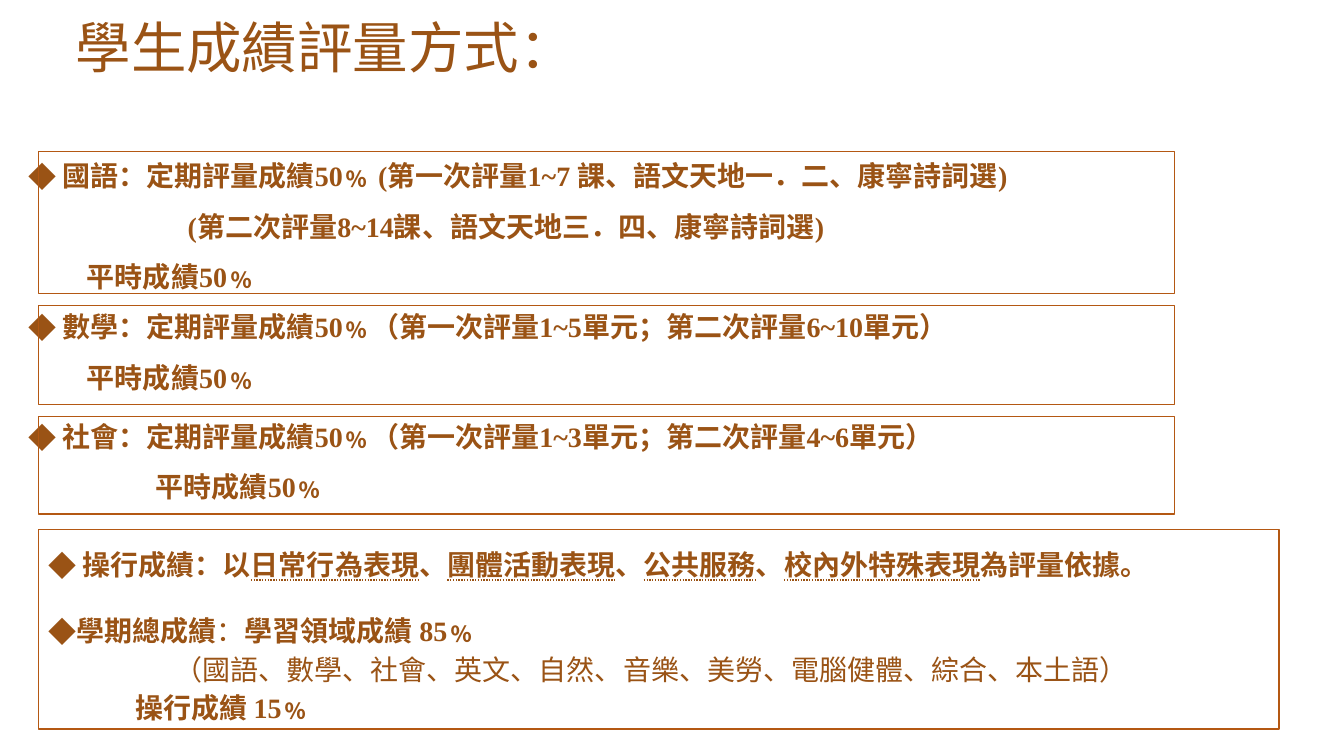
from dataclasses import dataclass

from lxml import etree
from pptx import Presentation
from pptx.dml.color import RGBColor
from pptx.enum import shapes, text
from pptx.oxml.ns import qn
from pptx.util import Pt


@dataclass(frozen=True)
class Theme:
    ink: RGBColor = RGBColor(0x9A, 0x53, 0x15)
    border: RGBColor = RGBColor(0xB4, 0x58, 0x13)
    latin: str = "Times New Roman"
    chinese: str = "Noto Sans CJK SC"
    title_size: float = 39.6
    body_size: float = 20
    border_width: float = 1


@dataclass(frozen=True)
class Line:
    """One paragraph: a list of (words, style) runs and its layout in points."""
    runs: list
    indent: float
    spacing: float
    hanging: float = 0
    before: float = 0
    after: float = 0
    bold: bool = True


THEME = Theme()
PLAIN, LIGHT, DOTTED = "plain", "light", "dotted"
SUBJECT_PITCH = 36
SUMMARY_PITCH = 27.6


def subject_line(words, indent, hanging=0, after=0):
    return Line([(words, PLAIN)], indent, SUBJECT_PITCH, hanging, after=after)


SUBJECTS = [
    subject_line("國語：定期評量成績50﹪ (第一次評量1~7 課、語文天地一．二、康寧詩詞選)", 37.5, 24.5),
    subject_line("(第二次評量8~14課、語文天地三．四、康寧詩詞選)", 127),
    subject_line("平時成績50﹪", 55),
    subject_line("數學：定期評量成績50﹪（第一次評量1~5單元；第二次評量6~10單元）", 37.5, 24.5),
    subject_line("平時成績50﹪", 55, after=6),
    subject_line("社會：定期評量成績50﹪（第一次評量1~3單元；第二次評量4~6單元）", 37.5, 24.5),
    subject_line("平時成績50﹪", 104),
]

SUMMARY = [
    Line([("操行成績：以", PLAIN), ("日常行為表現", DOTTED), ("、", PLAIN),
          ("團體活動表現", DOTTED), ("、", PLAIN), ("公共服務", DOTTED), ("、", PLAIN),
          ("校內外特殊表現", DOTTED), ("為評量依據。", PLAIN)], 24.5, 20, hanging=24.5),
    Line([("學期總成績", PLAIN), ("：", LIGHT), ("學習領域成績 85﹪", PLAIN)],
         20, 15, hanging=20, before=32),
    Line([("（國語、數學、社會、英文、自然、音樂、美勞、電腦健體、綜合、本土語）", PLAIN)],
         90, SUMMARY_PITCH, bold=False),
    Line([("操行成績 15﹪", PLAIN)], 62, SUMMARY_PITCH),
]

# left, top, width, height
FRAMES = [
    (27.4, 108, 811.4, 101.5),
    (27.4, 218.2, 811.4, 70.6),
    (27.4, 297.4, 811.4, 69.8),
    (27.4, 378, 886.3, 142.6),
]


def place(shape, left, top, width, height):
    shape.left, shape.top = Pt(left), Pt(top)
    shape.width, shape.height = Pt(width), Pt(height)


def style_paragraph(paragraph, latin, size, bold):
    font = paragraph.font
    font.size, font.bold = Pt(size), bold
    font.color.rgb = THEME.ink
    font.name = latin
    defaults = paragraph._p.get_or_add_pPr().find(qn("a:defRPr"))
    latin_element = defaults.find(qn("a:latin"))
    east_asian = etree.Element(qn("a:ea"), typeface=THEME.chinese)
    latin_element.addnext(east_asian)


def indent_paragraph(paragraph, line):
    properties = paragraph._p.get_or_add_pPr()
    properties.set("marL", str(int(Pt(line.indent))))
    properties.set("indent", str(-int(Pt(line.hanging))))
    if line.hanging:
        etree.SubElement(properties, qn("a:buFont"), typeface=THEME.chinese)
        etree.SubElement(properties, qn("a:buChar"), char="◆")
    else:
        etree.SubElement(properties, qn("a:buNone"))


def write_line(paragraph, line):
    indent_paragraph(paragraph, line)
    paragraph.line_spacing = Pt(line.spacing)
    if line.before:
        paragraph.space_before = Pt(line.before)
    if line.after:
        paragraph.space_after = Pt(line.after)
    style_paragraph(paragraph, THEME.latin, THEME.body_size, line.bold)
    for words, style in line.runs:
        run = paragraph.add_run()
        run.text = words
        if style == DOTTED:
            run.font.underline = text.MSO_UNDERLINE.DOTTED_LINE
        elif style == LIGHT:
            run.font.bold = False


def add_lines(slide, lines, box, top_margin=3.6):
    shape = slide.shapes.add_textbox(*map(Pt, box))
    frame = shape.text_frame
    frame.word_wrap = True
    frame.margin_top = Pt(top_margin)
    for number, line in enumerate(lines):
        paragraph = frame.add_paragraph() if number else frame.paragraphs[0]
        write_line(paragraph, line)


def add_frame(slide, box):
    shape = slide.shapes.add_shape(shapes.MSO_SHAPE.RECTANGLE, *map(Pt, box))
    shape.shadow.inherit = False
    shape.fill.background()
    shape.line.color.rgb = THEME.border
    shape.line.width = Pt(THEME.border_width)


def set_title(slide, words):
    title = slide.shapes.title
    place(title, 46.8, 3, 792, 60)
    frame = title.text_frame
    frame.text = words
    frame.auto_size = text.MSO_AUTO_SIZE.NONE
    frame.vertical_anchor = text.MSO_ANCHOR.MIDDLE
    paragraph = frame.paragraphs[0]
    paragraph.alignment = text.PP_ALIGN.LEFT
    style_paragraph(paragraph, THEME.chinese, THEME.title_size, False)


def main():
    presentation = Presentation()
    presentation.slide_width, presentation.slide_height = Pt(960), Pt(540)
    slide = presentation.slides.add_slide(presentation.slide_layouts[5])
    set_title(slide, "學生成績評量方式：")
    add_lines(slide, SUBJECTS, (0, 97.9, 886.3, 263.5))
    add_lines(slide, SUMMARY, (27.4, 368.6, 886.3, 151.9), top_margin=26.6)
    for box in FRAMES:
        add_frame(slide, box)
    presentation.save("out.pptx")


if __name__ == "__main__":
    main()
